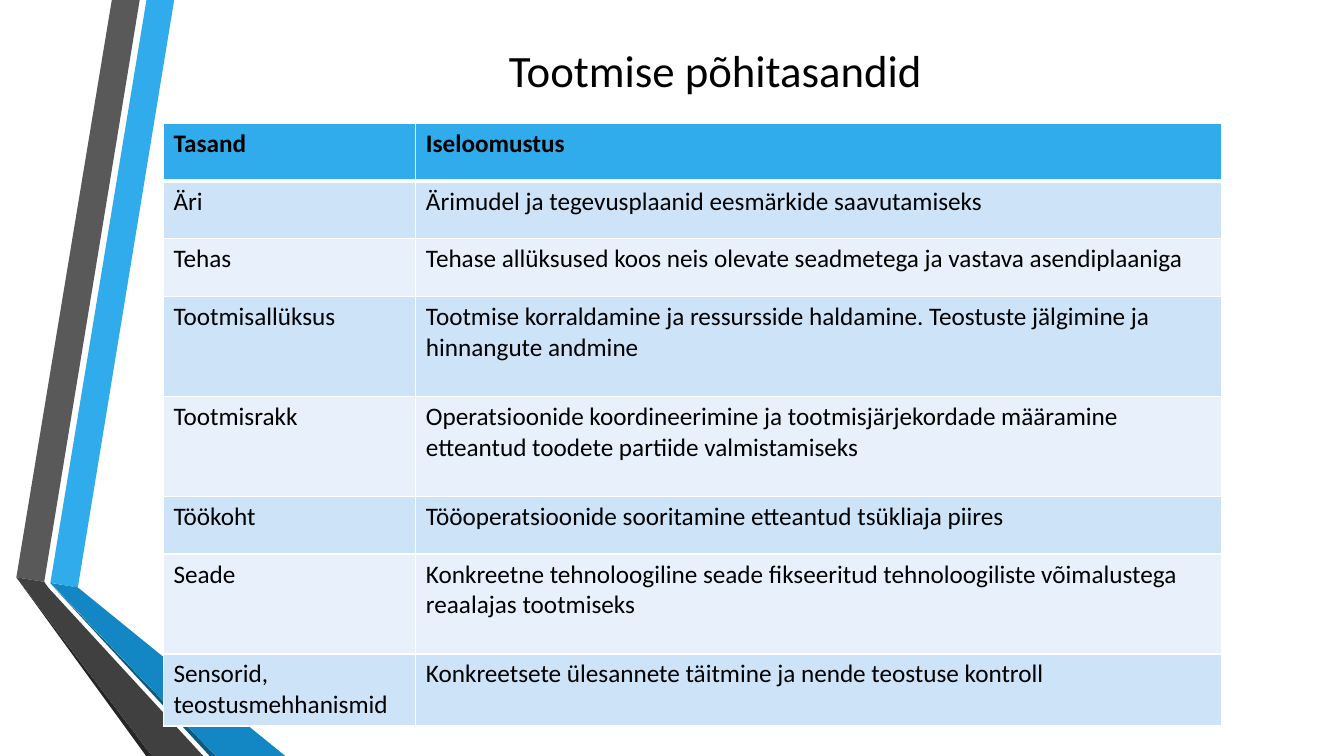
from lxml import etree
from pptx import Presentation
from pptx.dml.color import RGBColor
from pptx.enum.text import MSO_ANCHOR, PP_ALIGN
from pptx.oxml.ns import qn
from pptx.util import Pt

CENTER = PP_ALIGN.CENTER
LEFT = PP_ALIGN.LEFT
MIDDLE = MSO_ANCHOR.MIDDLE
TOP = MSO_ANCHOR.TOP
TITLE_ONLY = 5

BLUE = "30ACEC"
BLACK = "000000"
WHITE = "FFFFFF"
BANDS = ("CDE3F8", "E8F1FB")

RIBBONS = [
    (BLUE, [(36, 416.2), (55.6, 419.6), (124.4, 0), (104.6, 0)]),
    ("595959", [(99.8, 0), (79.9, 0), (11.7, 412.4), (31.6, 415.6)]),
    ("262626", [(11.7, 412.4), (104.4, 540), (108.7, 540)]),
    ("0C5A82", [(36, 416.8), (149.8, 540), (154.1, 540)]),
    ("1287C3", [(36, 416.4), (154.1, 540), (203.8, 540), (55.6, 419.6)]),
    ("404040", [(145.2, 540), (34.6, 419.8), (31.6, 415.6), (11.7, 412.4), (108.7, 540)]),
]

COLUMN_WIDTHS = (180.3, 575.5)
SHORT, TALL = 41.2, 71.4
ROW_HEIGHTS = (SHORT, SHORT, SHORT, TALL, TALL, SHORT, TALL, 51.5)
LEVELS = [
    ("Tasand", "Iseloomustus"),
    ("Äri", "Ärimudel ja tegevusplaanid eesmärkide saavutamiseks"),
    ("Tehas", "Tehase allüksused koos neis olevate seadmetega ja vastava asendiplaaniga"),
    ("Tootmisallüksus", "Tootmise korraldamine ja ressursside haldamine. "
     "Teostuste jälgimine ja hinnangute andmine"),
    ("Tootmisrakk", "Operatsioonide koordineerimine ja tootmisjärjekordade määramine "
     "etteantud toodete partiide valmistamiseks"),
    ("Töökoht", "Tööoperatsioonide sooritamine etteantud tsükliaja piires"),
    ("Seade", "Konkreetne tehnoloogiline seade fikseeritud tehnoloogiliste "
     "võimalustega reaalajas tootmiseks"),
    ("Sensorid, teostusmehhanismid",
     "Konkreetsete ülesannete täitmine ja nende teostuse kontroll"),
]


def color(value):
    return RGBColor.from_string(value)


class SlideBuilder:
    def __init__(self, slide, font_name):
        self.slide = slide
        self.font_name = font_name

    def style(self, paragraph, size, bold=False, alignment=LEFT):
        paragraph.alignment = alignment
        paragraph.font.name = self.font_name
        paragraph.font.size = Pt(size)
        paragraph.font.bold = bold
        paragraph.font.color.rgb = color(BLACK)

    def title(self, text, left, top, width, height):
        shape = self.slide.shapes.title
        shape.left, shape.top = Pt(left), Pt(top)
        shape.width, shape.height = Pt(width), Pt(height)
        shape.text_frame.text = text
        shape.text_frame.vertical_anchor = MIDDLE
        self.style(shape.text_frame.paragraphs[0], 32, alignment=CENTER)

    def ribbon(self, fill, points):
        corners = [(Pt(x), Pt(y)) for x, y in points]
        builder = self.slide.shapes.build_freeform(*corners[0])
        builder.add_line_segments(corners[1:], close=True)
        shape = builder.convert_to_shape()
        shape.shadow.inherit = False
        shape.fill.solid()
        shape.fill.fore_color.rgb = color(fill)
        shape.line.fill.background()

    def border(self, cell, side, width):
        properties = cell._tc.get_or_add_tcPr()
        line = etree.SubElement(properties, qn(f"a:ln{side}"), w=str(Pt(width)))
        fill = etree.SubElement(line, qn("a:solidFill"))
        etree.SubElement(fill, qn("a:srgbClr"), val=WHITE)

    def cell(self, cell, text, row):
        widths = {"L": 1, "R": 1, "T": 3 if row == 1 else 1, "B": 3 if row == 0 else 1}
        for side, width in widths.items():
            self.border(cell, side, width)
        cell.fill.solid()
        cell.fill.fore_color.rgb = color(BANDS[(row - 1) % 2] if row else BLUE)
        cell.vertical_anchor = TOP
        cell.text = text
        self.style(cell.text_frame.paragraphs[0], 18, bold=row == 0)

    def table(self, rows, left, top, column_widths, row_heights):
        table = self.slide.shapes.add_table(
            len(rows), len(column_widths), Pt(left), Pt(top),
            Pt(sum(column_widths)), Pt(sum(row_heights))).table
        for column, width in zip(table.columns, column_widths):
            column.width = Pt(width)
        for row, height in zip(table.rows, row_heights):
            row.height = Pt(height)
        for row, texts in enumerate(rows):
            for column, text in enumerate(texts):
                self.cell(table.cell(row, column), text, row)


def main():
    presentation = Presentation()
    presentation.slide_width, presentation.slide_height = Pt(960), Pt(540)
    slide = presentation.slides.add_slide(presentation.slide_layouts[TITLE_ONLY])
    builder = SlideBuilder(slide, "Calibri")
    for fill, points in RIBBONS:
        builder.ribbon(fill, points)
    builder.title("Tootmise põhitasandid", 116.6, 11.5, 789, 77)
    builder.table(LEVELS, 116.8, 88.2, COLUMN_WIDTHS, ROW_HEIGHTS)
    presentation.save("out.pptx")


if __name__ == "__main__":
    main()
